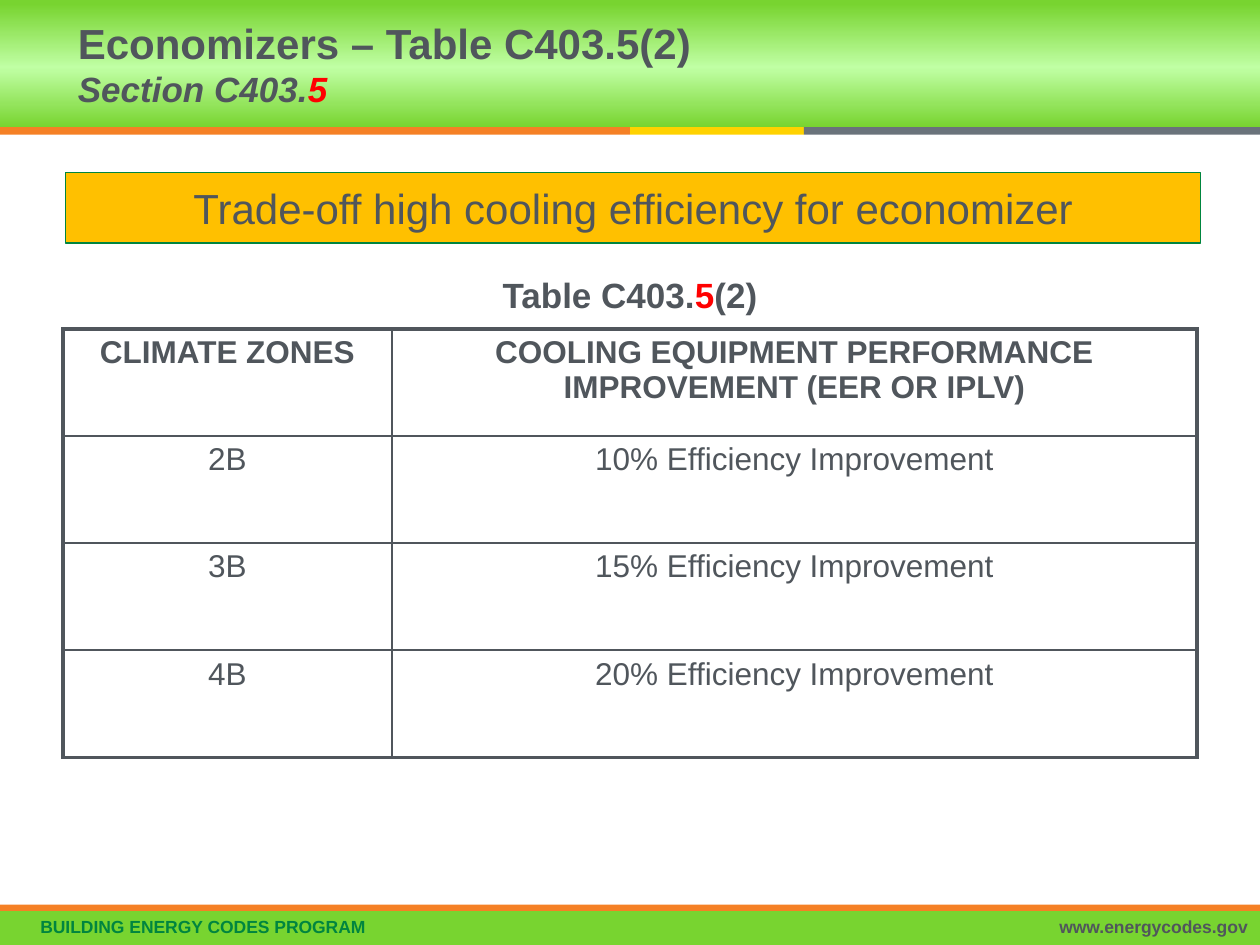
from copy import deepcopy

from pptx import Presentation
from pptx.dml.color import RGBColor
from pptx.enum.shapes import MSO_SHAPE
from pptx.enum.text import MSO_ANCHOR as ANCHOR, PP_ALIGN as ALIGN
from pptx.oxml.ns import qn
from pptx.oxml.xmlchemy import OxmlElement
from pptx.util import Inches, Pt

GREEN = RGBColor(0x78, 0xD4, 0x30)
PALE_GREEN = RGBColor(0xC0, 0xFF, 0xA4)
DARK_GREEN = RGBColor(0x00, 0x85, 0x3F)
ORANGE = RGBColor(0xF5, 0x80, 0x25)
YELLOW = RGBColor(0xFF, 0xD2, 0x00)
AMBER = RGBColor(0xFF, 0xC0, 0x00)
GRAY = RGBColor(0x6A, 0x73, 0x7B)
INK = RGBColor(0x50, 0x56, 0x5C)
RED = RGBColor(0xFF, 0x00, 0x00)

ROWS = [
    ("CLIMATE ZONES", "COOLING EQUIPMENT PERFORMANCE IMPROVEMENT (EER OR IPLV)"),
    ("2B", "10% Efficiency Improvement"),
    ("3B", "15% Efficiency Improvement"),
    ("4B", "20% Efficiency Improvement"),
]


class Builder:
    font = "Arial"
    thin, thick = Pt(1), Pt(2.25)

    def __init__(self, s):
        self.s = s

    def style(self, p, size, color=INK, bold=False, align=ALIGN.LEFT):
        p.alignment = align
        f = p.font
        f.name, f.size, f.bold = self.font, Pt(size), bold
        f.color.rgb = color

    def bar(self, x, y, w, h, color, line=None):
        sp = self.s.shapes.add_shape(
            MSO_SHAPE.RECTANGLE, Inches(x), Inches(y), Inches(w), Inches(h))
        sp.shadow.inherit = False
        sp.fill.solid()
        sp.fill.fore_color.rgb = color
        if line is None:
            sp.line.fill.background()
        else:
            sp.line.color.rgb = line
            sp.line.width = Pt(0.75)
        return sp

    def gradient_bar(self, x, y, w, h, edge, middle):
        """Bar that runs from edge colour to middle colour and back, top to bottom."""
        sp = self.bar(x, y, w, h, edge)
        sp.fill.gradient()
        sp.fill.gradient_angle = 90
        stops = sp.fill.gradient_stops
        for stop, color, position in zip(stops, (edge, middle), (0, 0.47)):
            stop.color.rgb = color
            stop.position = position
        gs_list = sp._element.spPr.find(qn("a:gradFill")).find(qn("a:gsLst"))
        gs_list.append(deepcopy(gs_list[0]))
        sp.fill.gradient_stops[2].position = 0.97

    def text(self, x, y, w, h, anchor=ANCHOR.TOP):
        tf = self.s.shapes.add_textbox(
            Inches(x), Inches(y), Inches(w), Inches(h)).text_frame
        tf.word_wrap = True
        tf.vertical_anchor = anchor
        return tf

    def runs(self, p, *parts):
        """Add (text, colour) runs; a colour of None keeps the paragraph's."""
        for text, color in parts:
            r = p.add_run()
            r.text = text
            if color is not None:
                r.font.color.rgb = color

    def footer(self, x, w, text, color, align, margin=0.1):
        tf = self.text(x, 7.24, w, 0.26)
        tf.margin_left = Inches(margin)
        p = tf.paragraphs[0]
        p.text = text
        p.line_spacing = 0.9
        self.style(p, 10, color, True, align)

    def border(self, cell, side, width):
        ln = OxmlElement(f"a:{side}")
        ln.set("w", str(width))
        fill = OxmlElement("a:solidFill")
        color = OxmlElement("a:srgbClr")
        color.set("val", str(INK))
        fill.append(color)
        ln.append(fill)
        cell._tc.get_or_add_tcPr().append(ln)

    def table(self, x, y, widths, row_height, rows):
        n_rows, n_cols = len(rows), len(widths)
        table = self.s.shapes.add_table(
            n_rows, n_cols, Inches(x), Inches(y),
            Inches(sum(widths)), Inches(row_height * n_rows)).table
        table.first_row = table.horz_banding = False
        for column, width in zip(table.columns, widths):
            column.width = Inches(width)
        for i, row in enumerate(rows):
            table.rows[i].height = Inches(row_height)
            for j, text in enumerate(row):
                cell = table.cell(i, j)
                cell.margin_left = cell.margin_right = Inches(0.12)
                outer = {"lnL": j == 0, "lnR": j == n_cols - 1,
                         "lnT": i == 0, "lnB": i == n_rows - 1}
                for side, is_outer in outer.items():
                    self.border(cell, side, self.thick if is_outer else self.thin)
                cell.fill.background()
                p = cell.text_frame.paragraphs[0]
                p.text = text
                self.style(p, 18, bold=i == 0, align=ALIGN.CENTER)


def main():
    prs = Presentation()
    prs.slide_width, prs.slide_height = Inches(10), Inches(7.5)
    b = Builder(prs.slides.add_slide(prs.slide_layouts[6]))

    b.gradient_bar(0, 0, 10, 1.01, GREEN, PALE_GREEN)
    x = 0
    for width, color in ((5, ORANGE), (1.38, YELLOW), (3.62, GRAY)):
        b.bar(x, 1.01, width, 0.06, color)
        x += width

    b.bar(0, 7.23, 10, 0.27, GREEN)
    b.bar(0, 7.18, 10, 0.05, ORANGE)
    b.footer(0.07, 7.97, "BUILDING ENERGY CODES PROGRAM", DARK_GREEN, ALIGN.LEFT, 0.25)
    b.footer(5.99, 4.01, "www.energycodes.gov", INK, ALIGN.RIGHT)

    title = b.text(0.52, 0, 5.87, 1.01, ANCHOR.MIDDLE).paragraphs[0]
    b.style(title, 24, bold=True)
    b.runs(title, ("Economizers – Table C403.5(2)", None))
    title.add_line_break()
    b.runs(title, ("Section C403.", None), ("5", RED))
    for r in title.runs[1:]:
        r.font.size, r.font.italic = Pt(20), True

    tf = b.bar(0.52, 1.37, 9.01, 0.56, AMBER, DARK_GREEN).text_frame
    tf.word_wrap = True
    tf.vertical_anchor = ANCHOR.MIDDLE
    p = tf.paragraphs[0]
    p.text = "Trade-off high cooling efficiency for economizer"
    b.style(p, 24, align=ALIGN.CENTER)

    caption = b.text(2.63, 2.12, 4.74, 0.43).paragraphs[0]
    b.style(caption, 20, bold=True, align=ALIGN.CENTER)
    b.runs(caption, ("Table C403.", None), ("5", RED), ("(2)", None))

    b.table(0.5, 2.61, (2.61, 6.39), 0.85, ROWS)

    prs.save("out.pptx")


if __name__ == "__main__":
    main()
